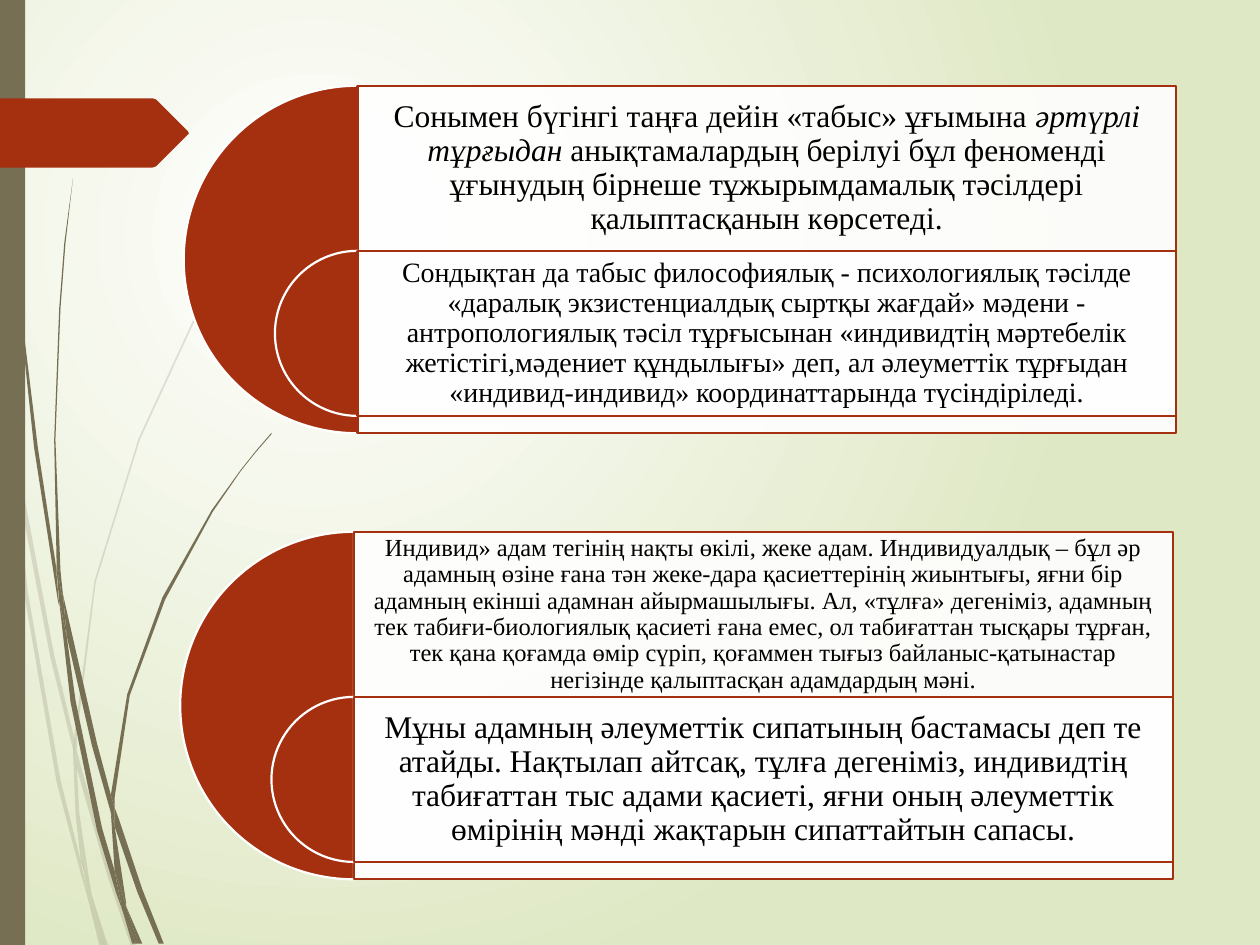
import pptx
import pptx.util
import pptx.dml.color
import pptx.enum.shapes
import pptx.enum.text
import pptx.oxml
import pptx.oxml.ns
from lxml import etree

Pt = pptx.util.Pt
SHAPES = pptx.enum.shapes.MSO_SHAPE
COLORS = {
    "white": "FFFFFF",
    "pale_green": "DFE8C4",
    "olive": "766F54",
    "rust": "A53010",
    "black": "000000",
}
FONT = "Times New Roman"
HUNDREDTH_INCH = Pt(0.72)

FAINT_STEMS = [
    [(8, 350), (6, 322), (0, 282), (0, 299), (7, 344)],
    [(40, 522), (59, 599), (59, 586), (43, 520), (10, 345), (12, 376)],
    [(64, 607), (61, 596), (61, 610), (85, 694), (104, 751), (108, 751), (88, 692)],
    [(83, 751), (86, 751), (73, 711)],
    [(64, 683), (48, 619), (22, 469), (12, 376), (8, 350), (19, 470), (45, 621),
     (64, 693), (70, 714), (69, 707)],
    [(58, 599), (60, 646), (64, 683), (67, 692), (73, 711), (72, 706), (63, 646),
     (61, 610), (61, 608)],
    [(61, 584), (76, 462), (111, 349), (159, 245), (187, 198), (201, 175), (217, 154),
     (217, 153), (201, 175), (186, 197), (158, 244), (110, 348), (75, 461), (59, 584),
     (59, 586), (61, 596)],
    [(70, 714), (79, 751), (82, 751)],
    [(61, 608), (61, 610), (61, 596), (59, 586), (58, 599)],
    [(67, 692), (65, 683), (69, 707), (70, 714), (82, 751), (83, 751), (73, 711)],
]
DARK_STEMS = [
    [(5, 110), (14, 233), (27, 355), (46, 477), (47, 481), (45, 457), (45, 453),
     (30, 355), (15, 232), (6, 109), (4, 48), (3, 0), (2, 0), (3, 48)],
    [(73, 592), (88, 645), (88, 633), (88, 631), (77, 590), (50, 472), (53, 505)],
    [(94, 649), (91, 641), (91, 656), (109, 708), (126, 749), (130, 749), (113, 706)],
    [(91, 691), (81, 657), (60, 556), (53, 505), (47, 477), (56, 557), (77, 659),
     (92, 708), (97, 722), (96, 717)],
    [(50, 472), (48, 453), (44, 349), (48, 245), (52, 193), (58, 141), (51, 193),
     (47, 245), (43, 349), (45, 449), (49, 472)],
    [(110, 749), (113, 749), (100, 719)],
    [(47, 477), (53, 505), (50, 472), (49, 472), (45, 449), (45, 453)],
    [(91, 633), (103, 552), (131, 476), (169, 406), (191, 374), (203, 359), (216, 344),
     (215, 344), (203, 358), (191, 373), (168, 405), (129, 474), (101, 551), (88, 631),
     (91, 641)],
    [(97, 722), (105, 749), (108, 749)],
    [(88, 645), (91, 691), (96, 706), (100, 719), (100, 716), (91, 656), (90, 651)],
    [(88, 645), (90, 651), (91, 656), (91, 641), (88, 631), (88, 633)],
    [(96, 706), (91, 691), (96, 717), (97, 722), (108, 749), (110, 749), (100, 719)],
]
ARROW_TAB = [(149, 107), (124, 132), (121, 133), (0, 133), (0, 78), (121, 78),
             (124, 79), (149, 104), (150, 105.5)]

PANELS = [
    ((105, 49), [
        (18, 5, [("Сонымен бүгінгі таңға дейін «табыс» ұғымына ", False),
                 ("әртүрлі тұрғыдан", True),
                 (" анықтамалардың берілуі бұл феноменді ұғынудың бірнеше "
                  "тұжырымдамалық тәсілдері қалыптасқанын көрсетеді.", False)]),
        (16, 5, [("Сондықтан да табыс философиялық - психологиялық тәсілде «даралық "
                  "экзистенциалдық сыртқы жағдай» мәдени - антропологиялық тәсіл "
                  "тұрғысынан «индивидтің мәртебелік жетістігі,мәдениет құндылығы» деп, "
                  "ал әлеуметтік тұрғыдан «индивид-индивид» координаттарында "
                  "түсіндіріледі.", False)]),
    ]),
    ((103, 303.9), [
        (14, 4.3, [("Индивид» адам тегінің нақты өкілі, жеке адам. Индивидуалдық – бұл әр "
                    "адамның өзіне ғана тән жеке-дара қасиеттерінің жиынтығы, яғни бір "
                    "адамның екінші адамнан айырмашылығы. Ал, «тұлға» дегеніміз, адамның "
                    "тек табиғи-биологиялық қасиеті ғана емес, ол табиғаттан тысқары "
                    "тұрған, тек қана қоғамда өмір сүріп, қоғаммен тығыз "
                    "байланыс-қатынастар негізінде қалыптасқан адамдардың мәні.", False)]),
        (18, 5, [("Мұны адамның әлеуметтік сипатының бастамасы деп те атайды. Нақтылап "
                  "айтсақ, тұлға дегеніміз, индивидтің табиғаттан тыс адами қасиеті, яғни "
                  "оның әлеуметтік өмірінің мәнді жақтарын сипаттайтын сапасы.", False)]),
    ]),
]


def rgb(name):
    return pptx.dml.color.RGBColor.from_string(COLORS[name])


def paint(shape, fill, line=None, opacity=100):
    shape.shadow.inherit = False
    shape.fill.solid()
    shape.fill.fore_color.rgb = rgb(fill)
    if opacity < 100:
        color = shape._element.spPr.find(".//" + pptx.oxml.ns.qn("a:srgbClr"))
        alpha = etree.SubElement(color, pptx.oxml.ns.qn("a:alpha"))
        alpha.set("val", str(opacity * 1000))
    if line:
        shape.line.color.rgb = rgb(line)
        shape.line.width = Pt(1.25)
    else:
        shape.line.fill.background()


def add_background(slide):
    fill = slide.background.fill
    fill.gradient()
    for stop, name, position in zip(fill.gradient_stops, ("white", "pale_green"), (0, 1)):
        stop.color.rgb = rgb(name)
        stop.position = position
    gradient = slide._element.find(".//" + pptx.oxml.ns.qn("a:gradFill"))
    linear = gradient.find(pptx.oxml.ns.qn("a:lin"))
    circle = pptx.oxml.parse_xml(
        f'<a:path {pptx.oxml.ns.nsdecls("a")} path="circle">'
        '<a:fillToRect l="50000" t="50000" r="100000" b="100000"/></a:path>')
    gradient.replace(linear, circle)


def add_outline(shapes, left, top, points, color, opacity=100):
    builder = shapes.build_freeform(*points[0], scale=HUNDREDTH_INCH)
    builder.add_line_segments(points[1:], close=True)
    paint(builder.convert_to_shape(Pt(left), Pt(top)), color, opacity=opacity)


def add_side_decoration(slide, left, top, height):
    for stems, opacity in ((FAINT_STEMS, 20), (DARK_STEMS, 100)):
        group = slide.shapes.add_group_shape()
        for stem in stems:
            add_outline(group.shapes, left, top, stem, "olive", opacity)
    bar = slide.shapes.add_shape(SHAPES.RECTANGLE, Pt(left), Pt(top), Pt(14.4), Pt(height))
    paint(bar, "olive")
    add_outline(slide.shapes, left, top, ARROW_TAB, "rust")


def add_half_disc(shapes, center, top, diameter):
    disc = shapes.add_shape(SHAPES.PIE, Pt(center - diameter / 2), Pt(top),
                            Pt(diameter), Pt(diameter))
    disc.adjustments[0] = 54
    disc.adjustments[1] = 162
    paint(disc, "rust", "white")


def add_row_text(shapes, left, top, width, height, row):
    size, inset, runs = row
    frame = shapes.add_textbox(Pt(left), Pt(top), Pt(width), Pt(height)).text_frame
    frame.word_wrap = True
    frame.vertical_anchor = pptx.enum.text.MSO_ANCHOR.MIDDLE
    frame.margin_left = frame.margin_right = Pt(inset)
    frame.margin_top = frame.margin_bottom = Pt(inset)
    paragraph = frame.paragraphs[0]
    paragraph.alignment = pptx.enum.text.PP_ALIGN.CENTER
    paragraph.line_spacing = 0.9
    paragraph.font.size = Pt(size)
    paragraph.font.name = FONT
    paragraph.font.color.rgb = rgb("black")
    for text, italic in runs:
        run = paragraph.add_run()
        run.text = text
        if italic:
            run.font.italic = True


def add_panel(slide, left, top, width, height, rows):
    shapes = slide.shapes.add_group_shape().shapes
    center = left + height / 2
    box_width = width - height / 2
    row_height = height * 0.475
    for index, row in enumerate(rows):
        row_top = top + index * row_height
        size = row_height if index else height
        add_half_disc(shapes, center, row_top, size)
        box = shapes.add_shape(SHAPES.RECTANGLE, Pt(center), Pt(row_top),
                               Pt(box_width), Pt(size))
        paint(box, "white", "rust", 90)
        add_row_text(shapes, center, row_top, box_width, row_height, row)


def main():
    presentation = pptx.Presentation()
    presentation.slide_width = Pt(720)
    presentation.slide_height = Pt(540)
    slide = presentation.slides.add_slide(presentation.slide_layouts[6])
    add_background(slide)
    add_side_decoration(slide, 0, 0, 540)
    for (left, top), rows in PANELS:
        add_panel(slide, left, top, 567.2, 198.6, rows)
    presentation.save("out.pptx")


if __name__ == "__main__":
    main()
